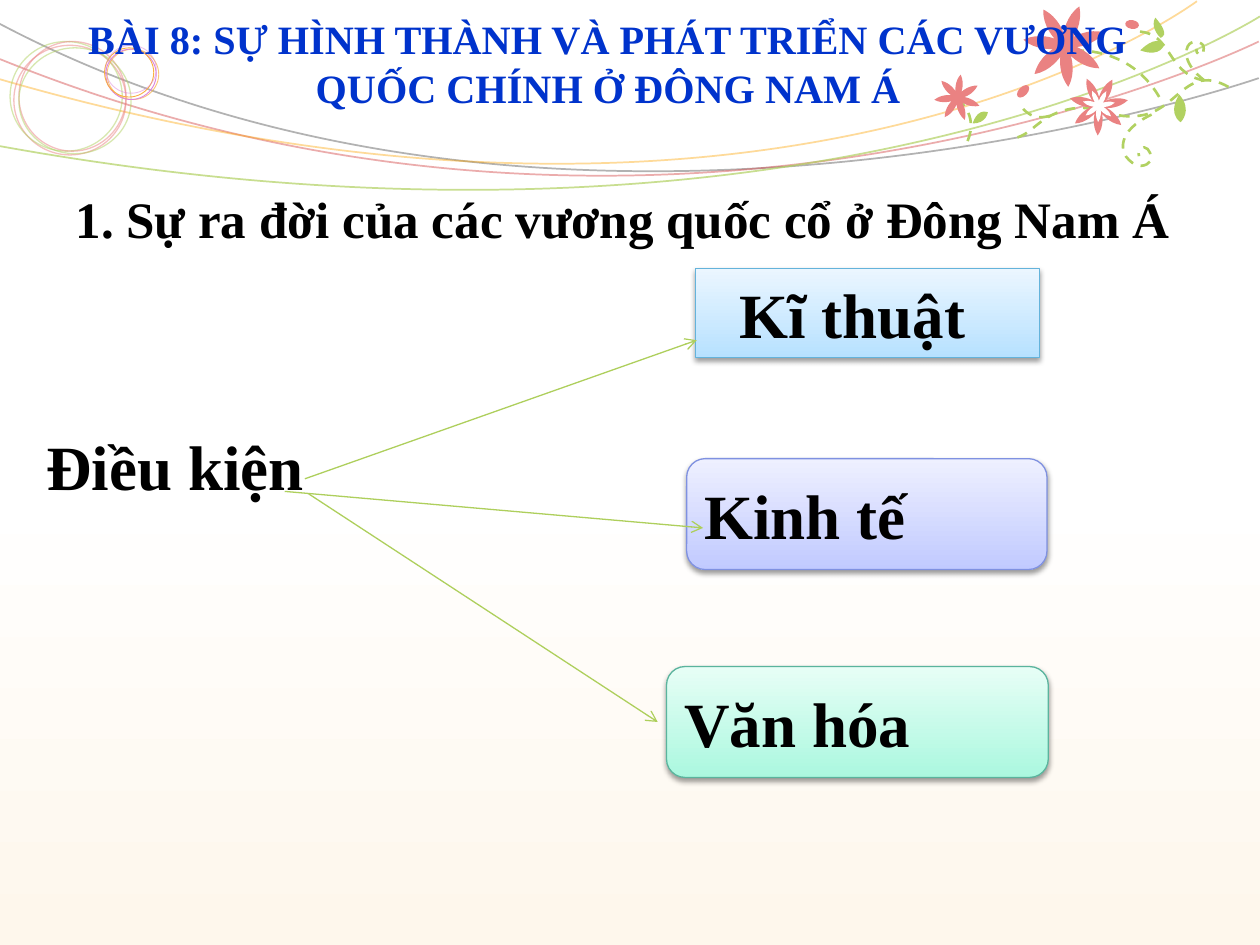
from math import cos, pi, sin

from lxml.etree import Element, SubElement
from pptx import Presentation
from pptx.dml.color import RGBColor
from pptx.enum.dml import MSO_LINE
from pptx.enum.shapes import MSO_CONNECTOR, MSO_SHAPE
from pptx.enum.text import MSO_ANCHOR, MSO_AUTO_SIZE, PP_ALIGN
from pptx.oxml.ns import qn
from pptx.util import Inches, Pt

FONT = "Times New Roman"
BLACK = RGBColor(0x00, 0x00, 0x00)
WHITE = RGBColor(0xFF, 0xFF, 0xFF)
TITLE_BLUE = RGBColor(0x00, 0x33, 0xCC)
GRAY = RGBColor(0xB2, 0xB2, 0xB2)
RED = RGBColor(0xD8, 0x5A, 0x5A)
YELLOW = RGBColor(0xFE, 0xA3, 0x00)
GREEN = RGBColor(0xB1, 0xD1, 0x61)
PINK = RGBColor(0xEA, 0x82, 0x82)
ORANGE = RGBColor(0xF9, 0xAF, 0x41)
VIOLET = RGBColor(0xDB, 0x85, 0xDB)
CREAM = RGBColor(0xFE, 0xF7, 0xEC)
ARROW_GREEN = RGBColor(0xAE, 0xCF, 0x5C)

presentation = Presentation()
presentation.slide_width = Inches(10)
presentation.slide_height = Inches(7.5)
slide = presentation.slides.add_slide(presentation.slide_layouts[1])
shapes = slide.shapes
title, body = slide.placeholders

# The slide is a grid of 100 columns by 75 rows.
column = presentation.slide_width / 100
row = presentation.slide_height / 75


def paint(shape, fill=None, line=None, width=1, opacity=100, dash=None):
    """Fill with nothing, one colour or a (top, bottom) gradient, then outline."""
    shape.shadow.inherit = False
    if fill is None:
        shape.fill.background()
    elif isinstance(fill, RGBColor):
        shape.fill.solid()
        shape.fill.fore_color.rgb = fill
    else:
        shape.fill.gradient()
        shape.fill.gradient_angle = 270
        for stop, color in zip(shape.fill.gradient_stops, fill):
            stop.color.rgb = color
    if line is None:
        shape.line.fill.background()
        return
    shape.line.color.rgb = line
    shape.line.width = Pt(width)
    if dash:
        shape.line.dash_style = dash
    if opacity < 100:
        color = shape._element.xpath(".//a:ln//a:srgbClr")[0]
        SubElement(color, qn("a:alpha"), val=str(opacity * 1000))


def trace(points, closed=False):
    """Draw joined cubic curves: a start, then two controls and an end for each."""
    corners = [(x * column, y * row) for x, y in points]
    builder = shapes.build_freeform(*corners[0])
    builder.add_line_segments(corners[1:], close=closed)
    shape = builder.convert_to_shape()
    segments = shape._element.xpath(".//a:lnTo")
    for first in range(0, len(segments), 3):
        curve = Element(qn("a:cubicBezTo"))
        segments[first].addprevious(curve)
        for segment in segments[first:first + 3]:
            curve.append(segment[0])
            segment.getparent().remove(segment)
    return shape


background = shapes.add_shape(MSO_SHAPE.RECTANGLE, 0, int(38.3 * row),
                              presentation.slide_width, int(36.7 * row))
paint(background, (WHITE, CREAM))

sweeps = [
    ([(0, 1.9), (44.6, 25.4), (99.9, 6.2), (99.9, 6.2)], GRAY, 100),
    ([(0, 4.7), (53.3, 26.3), (99.9, 3.3), (99.9, 3.3)], RED, 50),
    ([(0, 6.3), (62.5, 24.4), (95, 0.1), (95, 0.1)], YELLOW, 40),
    ([(0, 11.6), (65.3, 23.4), (100, 1.3), (100, 1.3)], GREEN, 70),
]
for points, color, opacity in sweeps:
    paint(trace(points), line=color, opacity=opacity)

rings = [
    (1.1, 3.6, 8.9, 8.7, PINK, 0.75, 50),
    (0.8, 3.3, 8.9, 8.7, GREEN, 0.75, 50),
    (1.5, 3.3, 8.5, 8.7, PINK, 0.75, 50),
    (1.5, 3.8, 8.9, 8.4, GREEN, 0.75, 50),
    (8.5, 3.9, 4.1, 4, ORANGE, 0.5, 70),
    (8.4, 3.9, 4, 4, VIOLET, 0.5, 100),
    (8.3, 3.8, 3.9, 3.9, ORANGE, 0.5, 100),
    (8.4, 3.6, 4, 3.8, VIOLET, 0.5, 50),
]
for left, top, width, height, color, weight, opacity in rings:
    ring = shapes.add_shape(MSO_SHAPE.OVAL, int(left * column), int(top * row),
                            int(width * column), int(height * row))
    paint(ring, line=color, width=weight, opacity=opacity)

vines = [
    [(76.8, 11.2), (77.7, 9), (76, 7.9), (76, 7.9)],
    [(97.5, 6.9), (94.3, 5.1), (93.6, 8.4), (90.9, 9.1), (88.2, 9.7), (87.3, 8.1),
     (84.7, 8.7), (82.2, 9.3), (81.9, 10.9), (80.2, 11)],
    [(95.6, 6.4), (93.9, 5.1), (94, 3.9), (94.4, 3.5), (94.9, 3.1), (95.3, 3.4),
     (95.5, 3.6), (95.6, 3.9), (95.5, 4.4), (95.2, 4.4), (95, 4.3), (94.9, 4), (95, 3.9)],
    [(95.6, 6.4), (92.5, 5.8), (93.1, 2.6), (90.3, 2.5)],
    [(83.3, 9.2), (81.6, 9.7), (80.9, 8.2), (80.9, 8.2)],
    [(92, 7.7), (89.3, 3.1), (84.2, 4.1), (84.2, 4.1)],
    [(91.4, 9.1), (88.6, 10.4), (88.9, 12.1), (89.6, 12.7), (90.3, 13.4), (91, 13.2),
     (91.3, 12.8), (91.5, 12.5), (91.2, 11.7), (90.8, 11.7), (90.4, 11.8), (90.3, 12.1),
     (90.4, 12.4)],
]
for points in vines:
    paint(trace(points), line=GREEN, width=1.5, dash=MSO_LINE.DASH)

leaves = [
    [(77.2, 9.8), (78.3, 9.8), (78.4, 8.9), (78.4, 8.9), (77.5, 8.6), (77.2, 9.8), (77.2, 9.8)],
    [(92.1, 3), (91.2, 2.1), (91.7, 1.4), (91.7, 1.4), (93, 2.9), (92.1, 3), (92.1, 3)],
    [(92.4, 3.5), (91.7, 2.7), (90.5, 4), (90.5, 4), (92.2, 4.6), (92.4, 3.5), (92.4, 3.5)],
    [(93.6, 7.5), (94.7, 8.8), (93.7, 9.7), (93.7, 9.7), (92.6, 8.9), (93.6, 7.5), (93.6, 7.5)],
]
for points in leaves:
    paint(trace(points, closed=True), GREEN)

for left, top, width, angle in [(80.6, 6.9, 1.2, 133.8), (89.3, 1.6, 1.1, 8.7)]:
    bud = shapes.add_shape(MSO_SHAPE.OVAL, int(left * column), int(top * row),
                           int(width * column), int(0.7 * row))
    bud.rotation = angle
    paint(bud, PINK)

# Each petal runs valley, side, tip, side, valley, as (turn, share of radius).
PETALS = 7
PETAL_PROFILE = [(-0.5, 0.29), (-0.35, 0.72), (0, 1), (0.38, 0.68), (0.5, 0.29), (0.5, 0.29)]
flowers = [
    (76, 7.75, 1.85, 72, PINK),
    (87.2, 8.4, 2.35, 92, PINK),
    (87.2, 8.4, 1.3, 92, WHITE),
    (84.5, 3.6, 3.3, 85, PINK),
]
for center_x, center_y, radius, tip_angle, color in flowers:
    points = []
    for petal in range(PETALS):
        for turn, share in PETAL_PROFILE:
            angle = tip_angle * pi / 180 + (petal + turn) * 2 * pi / PETALS
            points.append((center_x + radius * share * cos(angle),
                           center_y + radius * share * sin(angle)))
    paint(trace(points[:1] + points, closed=True), color)

boxes = [
    ("Văn hóa", MSO_SHAPE.ROUNDED_RECTANGLE, 52.9, 52.9, 30.3, 8.8, 1,
     (RGBColor(0xE7, 0xFE, 0xF6), RGBColor(0xAB, 0xF8, 0xDF)), RGBColor(0x5A, 0xB4, 0x9D)),
    ("Kinh tế", MSO_SHAPE.ROUNDED_RECTANGLE, 54.5, 36.4, 28.6, 8.8, 1,
     (RGBColor(0xEE, 0xF0, 0xFF), RGBColor(0xC1, 0xCA, 0xFF)), RGBColor(0x7F, 0x91, 0xE1)),
    ("Kĩ thuật", MSO_SHAPE.RECTANGLE, 55.2, 21.3, 27.3, 7.1, 3.5,
     (RGBColor(0xEB, 0xF6, 0xFF), RGBColor(0xB7, 0xE1, 0xFF)), RGBColor(0x64, 0xB3, 0xDB)),
    ("Điều kiện", MSO_SHAPE.RECTANGLE, 2.7, 33.4, 37, 7.1, 1, WHITE, None),
]
for text, kind, left, top, width, height, inset, fill, line in boxes:
    box = shapes.add_shape(kind, int(left * column), int(top * row),
                           int(width * column), int(height * row))
    paint(box, fill, line, 0.75)
    if line:
        effects = box._element.spPr.find(qn("a:effectLst"))
        shadow = SubElement(effects, qn("a:outerShdw"), blurRad=str(Pt(3.1)),
                            dist=str(Pt(1.6)), dir="5400000", rotWithShape="0")
        shadow_color = SubElement(shadow, qn("a:srgbClr"), val=str(BLACK))
        SubElement(shadow_color, qn("a:alpha"), val="38000")
    frame = box.text_frame
    frame.text = text
    frame.word_wrap = True
    frame.vertical_anchor = MSO_ANCHOR.MIDDLE
    frame.margin_left = int(inset * column)
    frame.paragraphs[0].alignment = PP_ALIGN.LEFT
    font = frame.paragraphs[0].font
    font.name, font.size, font.bold, font.color.rgb = FONT, Pt(36), True, BLACK

headings = [
    (title, "BÀI 8: SỰ HÌNH THÀNH VÀ PHÁT TRIỂN CÁC VƯƠNG QUỐC CHÍNH Ở ĐÔNG NAM Á",
     3.3, 0, 90, 10, 23, TITLE_BLUE, PP_ALIGN.CENTER, MSO_ANCHOR.MIDDLE),
    (body, "1. Sự ra đời của các vương quốc cổ ở Đông Nam Á",
     5, 14.4, 92.5, 6.7, 29.2, BLACK, PP_ALIGN.LEFT, MSO_ANCHOR.TOP),
]
for holder, text, left, top, width, height, size, color, alignment, anchor in headings:
    holder.left, holder.top = int(left * column), int(top * row)
    holder.width, holder.height = int(width * column), int(height * row)
    frame = holder.text_frame
    frame.text = text
    frame.word_wrap = True
    frame.auto_size = MSO_AUTO_SIZE.NONE
    frame.vertical_anchor = anchor
    paragraph = frame.paragraphs[0]
    paragraph.alignment = alignment
    font = paragraph.font
    font.name, font.size, font.bold, font.color.rgb = FONT, Pt(size), True, color
    shapes._spTree.append(holder._element)  # bring in front of the flowers
properties = body.text_frame.paragraphs[0]._p.get_or_add_pPr()
properties.set("marL", "0")
properties.set("indent", "0")
properties.insert(0, Element(qn("a:buNone")))

arrows = [(24.2, 38, 55.3, 27), (24.5, 39.2, 52.2, 57.3), (22.6, 39, 55.8, 41.9)]
for start_x, start_y, end_x, end_y in arrows:
    arrow = shapes.add_connector(MSO_CONNECTOR.STRAIGHT, int(start_x * column),
                                 int(start_y * row), int(end_x * column), int(end_y * row))
    arrow.line.color.rgb = ARROW_GREEN
    arrow.line.width = Pt(0.75)
    SubElement(arrow.line._get_or_add_ln(), qn("a:tailEnd"), type="arrow")
    SubElement(arrow._element.spPr, qn("a:effectLst"))

presentation.save("out.pptx")
